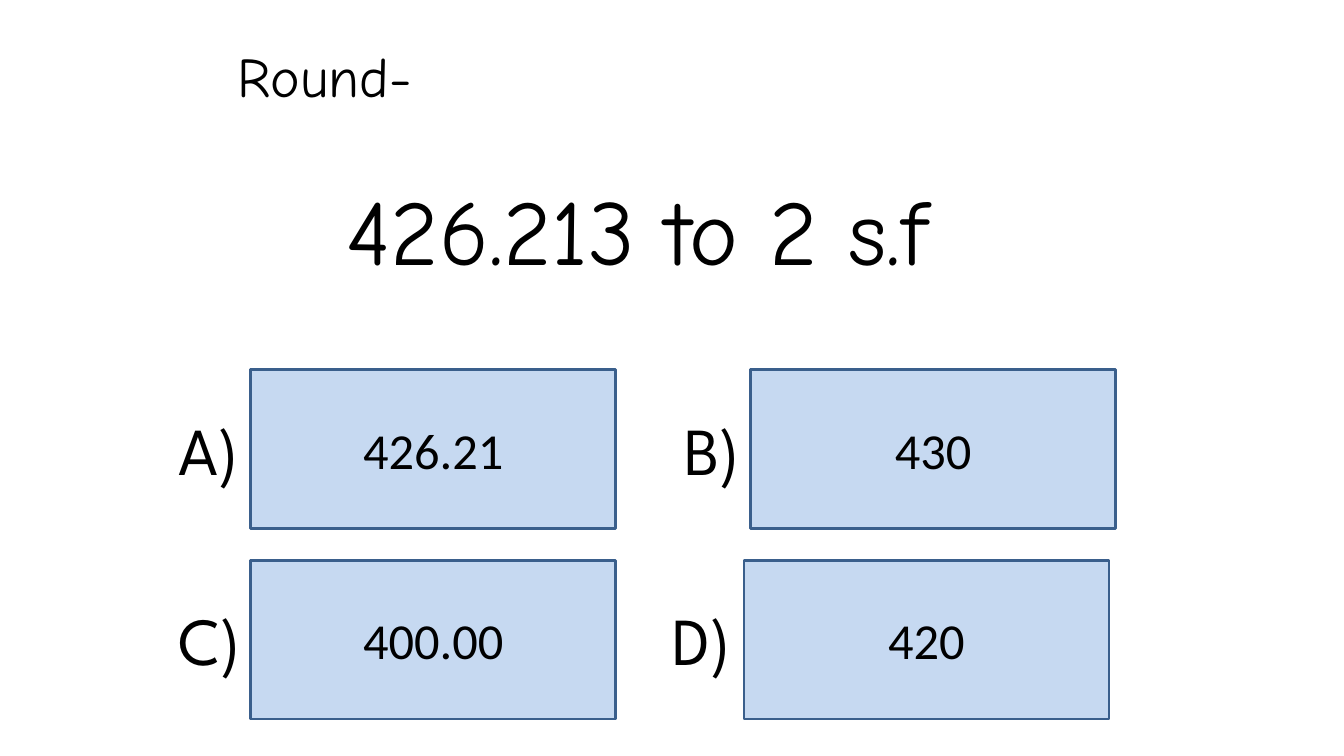
from pptx import Presentation
from pptx.dml.color import RGBColor
from pptx.enum.shapes import MSO_SHAPE
from pptx.enum.text import MSO_ANCHOR, MSO_AUTO_SIZE, PP_ALIGN
from pptx.util import Cm, Pt

RECTANGLE = MSO_SHAPE.RECTANGLE
TOP, MIDDLE = MSO_ANCHOR.TOP, MSO_ANCHOR.MIDDLE
LEFT, CENTER = PP_ALIGN.LEFT, PP_ALIGN.CENTER
NO_FIT, GROW = MSO_AUTO_SIZE.NONE, MSO_AUTO_SIZE.SHAPE_TO_FIT_TEXT

BLACK = RGBColor(0x00, 0x00, 0x00)
PALE_BLUE = RGBColor(0xC6, 0xD9, 0xF1)
DARK_BLUE = RGBColor(0x3A, 0x5F, 0x8C)

PROMPT = "Round-"
QUESTION = "426.213 to 2 s.f"
# label, answer, row, label left, label width, box left
ANSWERS = [
    ("A)", "426.21", 0, 4.24, 2.41, 6.32),
    ("B)", "430", 0, 16.99, 2.13, 18.92),
    ("C)", "400.00", 1, 4.24, 2.54, 6.32),
    ("D)", "420", 1, 16.71, 2.41, 18.75),
]

BOX_WIDTH, BOX_HEIGHT = 9.2, 4
LABEL_HEIGHT = 2.31
FIRST_ROW, ROW_PITCH = 9.32, 4.8

PROMPT_FONT = {"name": "Comic Neue", "size": Pt(40)}
QUESTION_FONT = {"name": "Comic Neue", "size": Pt(66)}
LABEL_FONT = {"name": "League Spartan", "size": Pt(48)}
ANSWER_FONT = {"name": "Calibri", "size": Pt(36)}


def write(paragraph, text, font, alignment):
    paragraph.alignment = alignment
    run = paragraph.add_run()
    run.text = text
    for name, value in font.items():
        setattr(run.font, name, value)
    run.font.color.rgb = BLACK


def add_title(slide):
    title = slide.shapes.title
    place = {"left": Cm(5.74), "top": Cm(0.91), "width": Cm(20.6), "height": Cm(6.5)}
    for name, value in place.items():
        setattr(title, name, value)
    frame = title.text_frame
    frame.auto_size = NO_FIT
    frame.vertical_anchor = TOP
    write(frame.paragraphs[0], PROMPT, PROMPT_FONT, LEFT)
    question = frame.add_paragraph()
    question.space_before = Pt(46)
    write(question, QUESTION, QUESTION_FONT, CENTER)


def add_answer(slide, answer, left, top):
    box = slide.shapes.add_shape(
        RECTANGLE, Cm(left), Cm(top), Cm(BOX_WIDTH), Cm(BOX_HEIGHT))
    box.shadow.inherit = False
    box.fill.solid()
    box.fill.fore_color.rgb = PALE_BLUE
    box.line.color.rgb = DARK_BLUE
    box.line.width = Pt(2)
    box.text_frame.vertical_anchor = MIDDLE
    write(box.text_frame.paragraphs[0], answer, ANSWER_FONT, CENTER)


def add_label(slide, label, left, top, width):
    label_top = top + (BOX_HEIGHT - LABEL_HEIGHT) / 2
    text_box = slide.shapes.add_textbox(
        Cm(left), Cm(label_top), Cm(width), Cm(LABEL_HEIGHT))
    text_box.text_frame.word_wrap = False
    text_box.text_frame.auto_size = GROW
    write(text_box.text_frame.paragraphs[0], label, LABEL_FONT, LEFT)


def main():
    presentation = Presentation()
    presentation.slide_width = Cm(33.87)
    presentation.slide_height = Cm(19.05)
    title_only = presentation.slide_layouts.get_by_name("Title Only")
    slide = presentation.slides.add_slide(title_only)
    add_title(slide)
    for label, answer, row, label_left, label_width, box_left in ANSWERS:
        top = FIRST_ROW + row * ROW_PITCH
        add_answer(slide, answer, box_left, top)
        add_label(slide, label, label_left, top, label_width)
    presentation.save("out.pptx")


if __name__ == "__main__":
    main()
